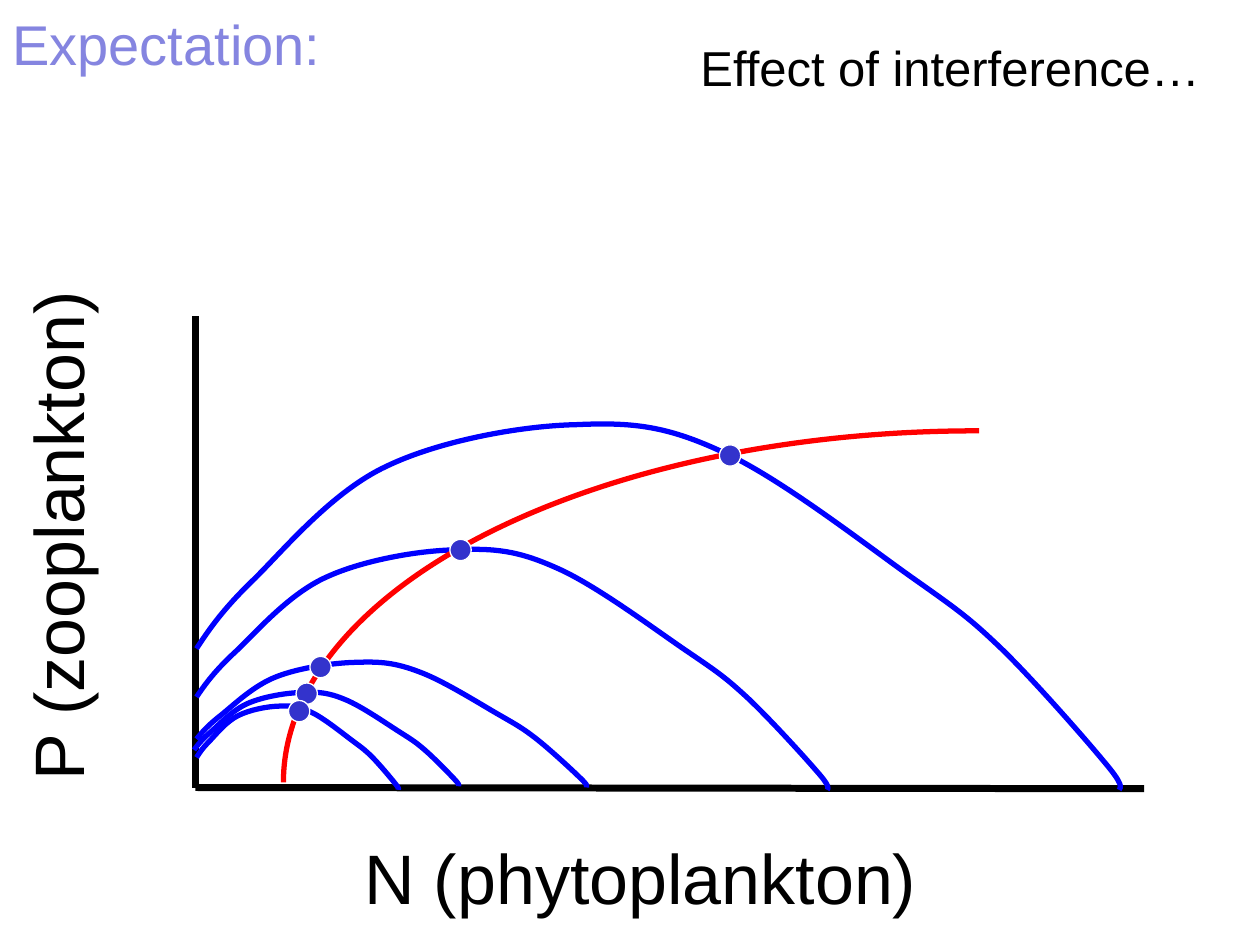
from lxml.etree import SubElement
from pptx import Presentation
from pptx.dml.color import RGBColor
from pptx.enum.shapes import MSO_CONNECTOR, MSO_SHAPE
from pptx.enum.text import MSO_AUTO_SIZE, PP_ALIGN
from pptx.oxml.ns import qn
from pptx.util import Pt

BLACK, BLUE, RED = "000000", "0000FF", "FF0000"
LEFT, CENTER = PP_ALIGN.LEFT, PP_ALIGN.CENTER

# text, box (left, top, width, height), size, colour, alignment
HEADINGS = [
    ("Expectation:", (0, 2, 234, 46), 32, "8585E0", LEFT),
    ("Effect of interference…", (366, 18, 354, 41), 28, BLACK, CENTER),
]
# text, box, rotation
AXIS_LABELS = [
    ("N (phytoplankton)", (201, 466, 333, 62), 0),
    ("P (zooplankton)", (-119.5, 273.6, 296.6, 62), 270),
]
AXES = [(111.6, 180.7, 111.6, 450), (111.6, 450, 653.8, 450.7)]

# Prey isocline in percent of its box: a start, then Bézier triples
ISOCLINE = [
    (0, 61.6),
    (1.4, 56.2), (2.9, 50.7), (6.3, 42.5),
    (9.6, 34.2), (14.7, 18.8), (20.5, 12),
    (26.2, 5.1), (34.9, 1), (41, 0.7),
    (47, 0), (50.7, 1), (56.8, 8.2),
    (62.9, 15.1), (72.3, 33.6), (77.3, 42.5),
    (82.3, 51.4), (83.4, 53.4), (86.8, 61.6),
    (90.2, 69.9), (95.8, 86), (97.8, 92.1),
    (100, 98.6), (99.7, 99.3), (99.5, 100),
]
PREY_BOXES = [
    (112.3, 403.2, 115.9, 48.2),
    (110.9, 395.3, 151.9, 54),
    (112.3, 378, 223.9, 72),
    (112.3, 313.2, 362.2, 138.2),
    (112.3, 241.2, 529.9, 210.2),
]
PREDATOR_BOX = (162, 246.2, 792, 401.8)
EQUILIBRIA = [(417.2, 260.3), (263.2, 314.3), (175.3, 396.4),
              (171, 406.4), (183.2, 381.2)]
DOT = 12.2


def points(values):
    return [Pt(value) for value in values]


def set_line(shape, color, width):
    shape.line.color.rgb = RGBColor.from_string(color)
    shape.line.width = Pt(width)


def add_text(shapes, text, box, size, color, align=LEFT, wrap=True):
    label = shapes.add_textbox(*points(box))
    frame = label.text_frame
    frame.text = text
    frame.word_wrap = wrap
    frame.auto_size = MSO_AUTO_SIZE.SHAPE_TO_FIT_TEXT
    paragraph = frame.paragraphs[0]
    paragraph.alignment = align
    font = paragraph.runs[0].font
    font.name, font.size = "Arial", Pt(size)
    font.color.rgb = RGBColor.from_string(color)
    return label


def add_axis(shapes, ends):
    axis = shapes.add_connector(MSO_CONNECTOR.STRAIGHT, *points(ends))
    set_line(axis, BLACK, 4)
    SubElement(axis._element.spPr, qn("a:effectLst"))


def add_prey_isocline(shapes, box):
    left, top, width, height = box
    start, *rest = [points((left + x * width / 100, top + y * height / 100))
                    for x, y in ISOCLINE]
    builder = shapes.build_freeform(*start)
    builder.add_line_segments(rest, close=False)
    curve = builder.convert_to_shape()
    curve.shadow.inherit = False
    curve.fill.background()
    set_line(curve, BLUE, 3)
    # Turn every three straight segments into one Bézier segment
    segments = list(curve._element.iter(qn("a:lnTo")))
    outline = segments[0].getparent()
    for first in range(0, len(segments), 3):
        bezier = SubElement(outline, qn("a:cubicBezTo"))
        for segment in segments[first:first + 3]:
            bezier.append(segment[0])
            outline.remove(segment)


def add_predator_isocline(shapes):
    arc = shapes.add_shape(MSO_SHAPE.ARC, *points(PREDATOR_BOX))
    arc.adjustments[0], arc.adjustments[1] = 161.74, 0
    arc._element.spPr.xfrm.set("flipH", "1")
    arc.shadow.inherit = False
    arc.fill.background()
    set_line(arc, RED, 3)


def add_equilibrium(shapes, x, y):
    box = (x - DOT / 2, y - DOT / 2, DOT, DOT)
    dot = shapes.add_shape(MSO_SHAPE.OVAL, *points(box))
    dot.shadow.inherit = False
    dot.fill.solid()
    dot.fill.fore_color.rgb = RGBColor.from_string("3333CC")
    set_line(dot, "FFFFFF", 0.75)


def main():
    deck = Presentation()
    deck.slide_width, deck.slide_height = Pt(720), Pt(540)
    shapes = deck.slides.add_slide(deck.slide_layouts[6]).shapes

    for heading in HEADINGS:
        add_text(shapes, *heading)
    for ends in AXES:
        add_axis(shapes, ends)
    for text, box, rotation in AXIS_LABELS:
        label = add_text(shapes, text, box, 40, BLACK, wrap=False)
        label.rotation = rotation
        label.text_frame.paragraphs[0].line_spacing = 1.15
    for box in PREY_BOXES:
        add_prey_isocline(shapes, box)
    add_predator_isocline(shapes)
    for x, y in EQUILIBRIA:
        add_equilibrium(shapes, x, y)
    deck.save("out.pptx")


if __name__ == "__main__":
    main()
